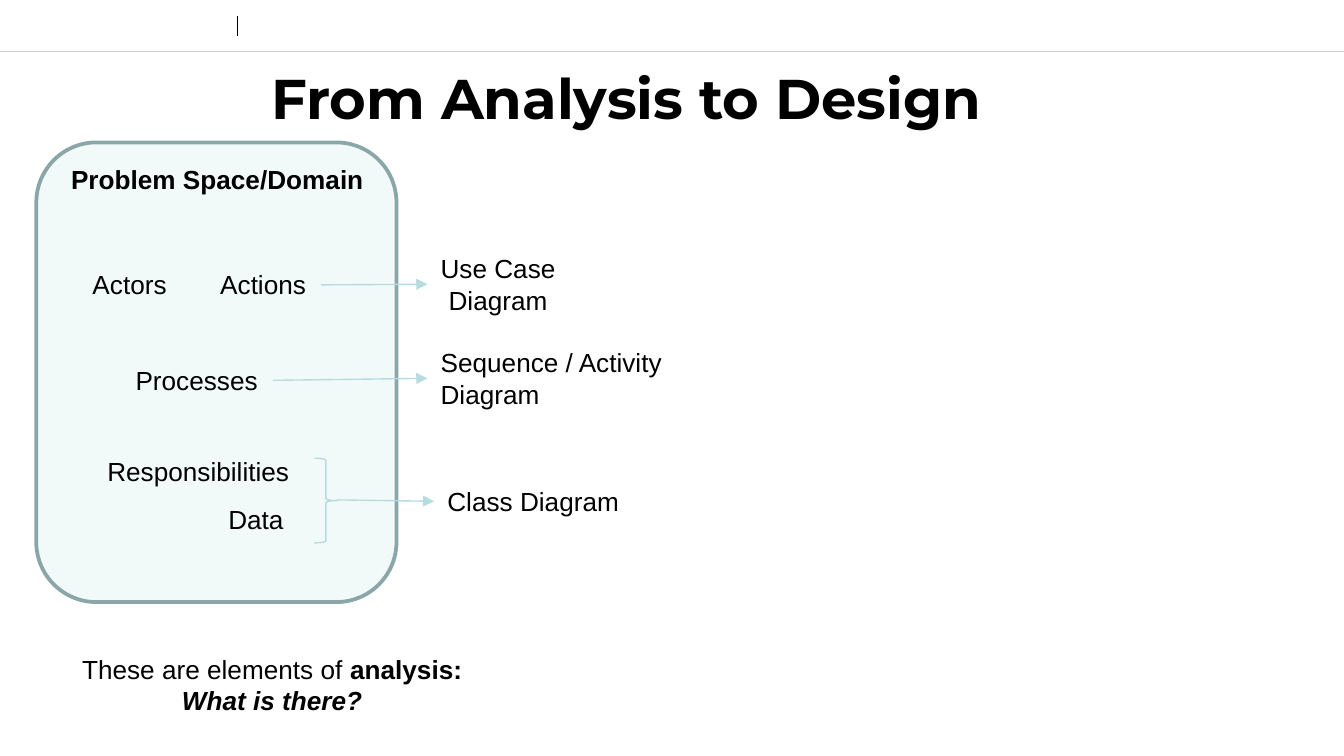
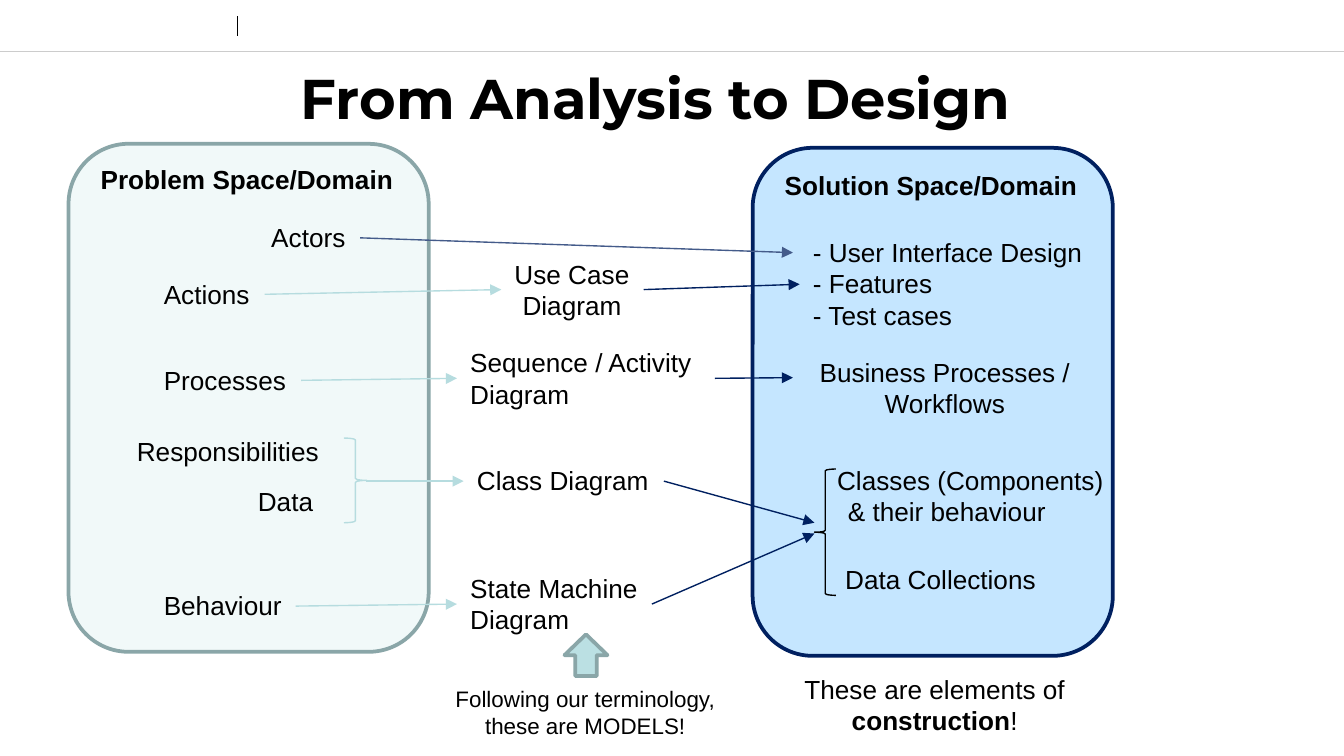
from lxml.etree import SubElement
from pptx import Presentation
from pptx.dml.color import RGBColor
from pptx.enum.shapes import MSO_CONNECTOR, MSO_SHAPE
from pptx.enum.text import MSO_ANCHOR, PP_ALIGN
from pptx.oxml.ns import qn
from pptx.util import Emu, Pt

PX = 9144  # EMU per px, 100 px to the inch
WIDTH = 1000
LEFT, RIGHT = 1, 3  # connection sites
TEAL, NAVY, SLATE, BLACK = "B6DCDF", "002060", "445B8A", "000000"
PROBLEM = ("F1F9F9", "8AA6A8")
SOLUTION = ("C5E6FF", NAVY)
UP_ARROW = ("BBE0E3", "8AA6A8")
TITLE = "From Analysis to Design"


def left(text, style=""):
    return "l", [(text, style)]


def mid(*runs):
    return "c", list(runs)


# Labels: width and paragraphs; "\n" is a line break inside a paragraph
LABELS = {
    "problem": (239, [left("Problem Space/Domain", "b")]),
    "solution": (239, [left("Solution Space/Domain", "b")]),
    "actors": (76, [left("Actors")]),
    "actions": (85, [left("Actions")]),
    "processes": (112, [left("Processes")]),
    "duties": (156, [left("Responsibilities")]),
    "data": (62, [left("Data")]),
    "behaviour": (108, [left("Behaviour")]),
    "use case": (106, [left("Use Case"), mid(("Diagram", ""))]),
    "sequence": (192, [left("Sequence / Activity \nDiagram")]),
    "class": (149, [left("Class Diagram")]),
    "state": (145, [left("State Machine\nDiagram")]),
    "interface": (221, [left("- User Interface Design"),
                        left("- Features\n- Test cases")]),
    "workflows": (208, [mid(("Business Processes /\nWorkflows", ""))]),
    "classes": (219, [left("Classes (Components)")]),
    "their behaviour": (188, [left("& their behaviour")]),
    "collections": (188, [left("Data Collections")]),
}

# Notes: x, y, w, h, size, paragraphs
ANALYSIS_NOTE = (13, 481, 379, 57, 14, [
    mid(("These are elements of ", ""), ("analysis:", "b")),
    mid(("What is there?", "bi"))])
MODELS_NOTE = (310, 505, 251, 50, 12, [
    mid(("Following our terminology, these are MODELS!", ""))])
CONSTRUCTION_NOTE = (570, 496, 251, 57, 14, [
    mid(("These are elements of ", ""), ("construction", "b"), ("!", ""))])

# Arrow ends are label names, or (x, y) points
SLIDES = [
    {
        "title x": 0,
        "panels": [(27, 106, 268, 342, PROBLEM)],
        "labels": {
            "problem": (43, 117), "actors": (59, 195), "actions": (154, 195),
            "processes": (91, 266), "duties": (70, 334), "data": (160, 370),
            "use case": (318, 183), "sequence": (318, 253),
            "class": (323, 356),
        },
        "braces": [(234, 341, 17, 63, 0, TEAL)],
        "up arrows": [],
        "arrows": [
            ("actions", "use case", TEAL),
            ("processes", "sequence", TEAL),
            ((251, 372), "class", TEAL),
        ],
        "notes": [ANALYSIS_NOTE],
    },
    {
        "title x": 22,
        "panels": [(51, 107, 268, 378, PROBLEM),
                   (560, 110, 268, 378, SOLUTION)],
        "labels": {
            "problem": (65, 117), "actors": (192, 160), "actions": (112, 202),
            "processes": (112, 266), "duties": (92, 319), "data": (182, 356),
            "behaviour": (112, 434),
            "use case": (373, 187), "sequence": (340, 253),
            "class": (345, 341), "state": (340, 421),
            "solution": (574, 121), "interface": (595, 171),
            "workflows": (599, 260), "classes": (613, 341),
            "their behaviour": (621, 364), "collections": (619, 414),
        },
        "braces": [(256, 326, 17, 63, 0, TEAL),
                   (606, 349, 16, 94, 180, BLACK)],
        "up arrows": [(420, 472, 32, 31, UP_ARROW)],
        "arrows": [
            ("actions", "use case", TEAL),
            ("processes", "sequence", TEAL),
            ((272, 358), "class", TEAL),
            ("behaviour", "state", TEAL),
            ("use case", "interface", NAVY),
            ("sequence", (590, 281), NAVY),
            ("class", (606, 389), NAVY),
            ("state", (606, 397), NAVY),
            ("actors", (590, 188), SLATE),
        ],
        "notes": [MODELS_NOTE, CONSTRUCTION_NOTE],
    },
]


def px(*values):
    return [Emu(v * PX) for v in values]


def rgb(color):
    return RGBColor.from_string(color)


def add_text(s, box, paragraphs, size=14, font="Arial", wrap=True, inset=5):
    sp = s.shapes.add_textbox(*px(*box))
    tf = sp.text_frame
    tf.word_wrap = wrap
    tf.vertical_anchor = MSO_ANCHOR.TOP
    tf.margin_left, tf.margin_right = px(10, 10)
    tf.margin_top, tf.margin_bottom = px(inset, inset)
    for i, (align, runs) in enumerate(paragraphs):
        p = tf.add_paragraph() if i else tf.paragraphs[0]
        p.alignment = PP_ALIGN.CENTER if align == "c" else PP_ALIGN.LEFT
        for text, style in runs:
            for n, line in enumerate(text.split("\n")):
                if n:
                    p.add_line_break()
                r = p.add_run()
                r.text = line
                r.font.name, r.font.size = font, Pt(size)
                r.font.bold, r.font.italic = "b" in style, "i" in style
                r.font.color.rgb = rgb(BLACK)
    return sp


def add_label(s, name, x, y):
    w, paragraphs = LABELS[name]
    lines = sum(1 + text.count("\n") for _, runs in paragraphs
                for text, _ in runs)
    wrap = name in ("their behaviour", "collections")
    return add_text(s, (x, y, w, int(10.5 + 23.5 * lines)), paragraphs,
                    wrap=wrap)


def add_outline(s, kind, box, line, width, fill=None):
    sp = s.shapes.add_shape(kind, *px(*box))
    sp.shadow.inherit = False
    if fill:
        sp.fill.solid()
        sp.fill.fore_color.rgb = rgb(fill)
    else:
        sp.fill.background()
    sp.line.color.rgb = rgb(line)
    sp.line.width = Pt(width)
    return sp


def add_line(s, start, end, color, width):
    c = s.shapes.add_connector(MSO_CONNECTOR.STRAIGHT, *px(*start, *end))
    c.line.color.rgb = rgb(color)
    c.line.width = Pt(width)
    SubElement(c._element.spPr, qn("a:effectLst"))
    return c


def add_arrow(s, start, end, color, labels):
    points = [(0, 0) if e in labels else e for e in (start, end)]
    c = add_line(s, *points, color, 0.75)
    if start in labels:
        c.begin_connect(labels[start], RIGHT)
    if end in labels:
        c.end_connect(labels[end], LEFT)
    SubElement(c.get_or_add_ln(), qn("a:tailEnd"), type="triangle")


def add_frame(s, title_x):
    add_line(s, (0, 38), (WIDTH, 38), "CCCCCC", 0.25)
    add_line(s, (177, 12), (177, 27), BLACK, 0.5)
    add_text(s, (title_x, 37, 932, 63), [mid((TITLE, "b"))], size=30,
             font="Montserrat", inset=10)


def build_slide(prs, content):
    s = prs.slides.add_slide(prs.slide_layouts[6])
    add_frame(s, content["title x"])
    for *box, (fill, line) in content["panels"]:
        add_outline(s, MSO_SHAPE.ROUNDED_RECTANGLE, box, line, 2, fill)
    labels = {name: add_label(s, name, x, y)
              for name, (x, y) in content["labels"].items()}
    for *box, rotation, line in content["braces"]:
        sp = add_outline(s, MSO_SHAPE.RIGHT_BRACE, box, line, 0.75)
        sp.rotation = rotation
    for *box, (fill, line) in content["up arrows"]:
        add_outline(s, MSO_SHAPE.UP_ARROW, box, line, 2, fill)
    for start, end, color in content["arrows"]:
        add_arrow(s, start, end, color, labels)
    for *box, size, paragraphs in content["notes"]:
        add_text(s, box, paragraphs, size)


def main():
    prs = Presentation()
    prs.slide_width = Emu(WIDTH * PX)
    prs.slide_height = Emu(WIDTH * PX * 9 // 16)
    for content in SLIDES:
        build_slide(prs, content)
    prs.save("out.pptx")


if __name__ == "__main__":
    main()
